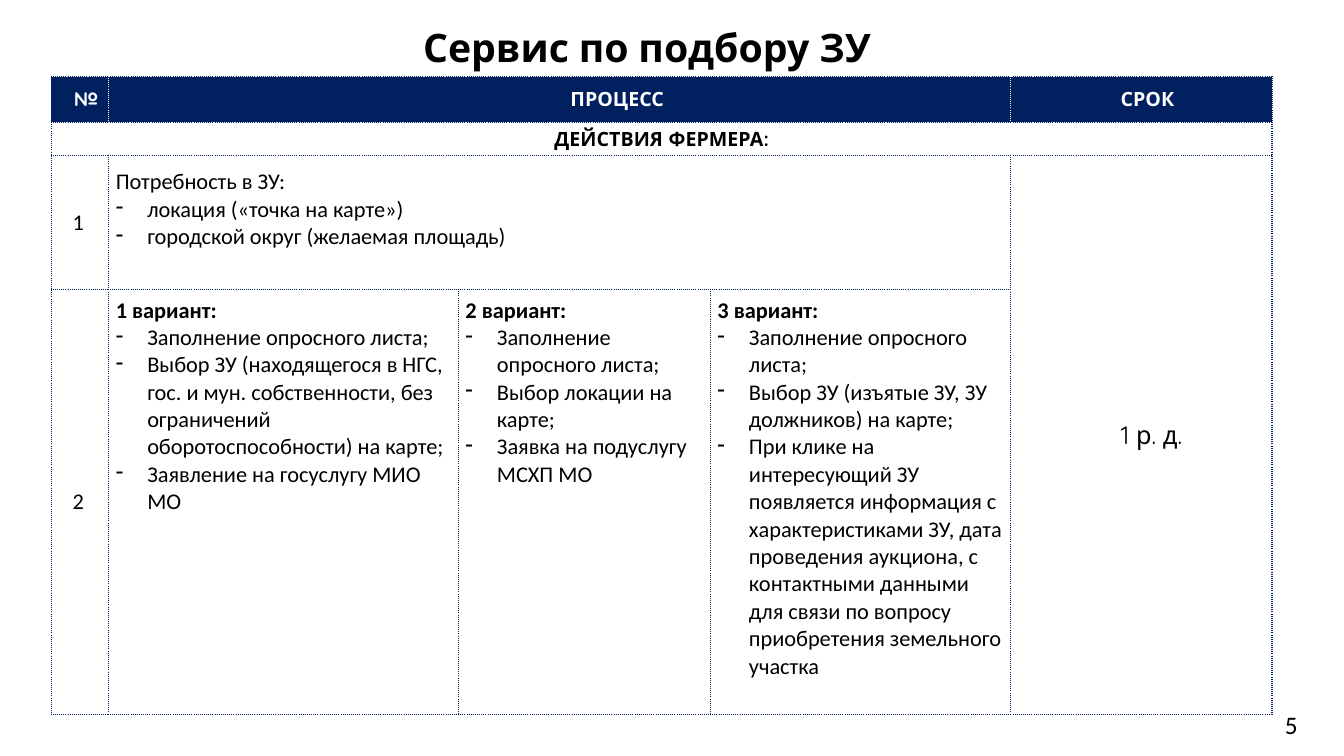
from lxml import etree
from pptx import Presentation
from pptx.dml.color import RGBColor
from pptx.enum.text import MSO_ANCHOR, MSO_AUTO_SIZE, PP_ALIGN
from pptx.oxml.ns import qn
from pptx.util import Pt

LEFT, CENTER = PP_ALIGN.LEFT, PP_ALIGN.CENTER
TOP, MIDDLE = MSO_ANCHOR.TOP, MSO_ANCHOR.MIDDLE
GROW = MSO_AUTO_SIZE.SHAPE_TO_FIT_TEXT
NAVY, WHITE, BLACK = "002060", "FFFFFF", "000000"
COLUMN_WIDTHS = [41, 249.8, 180, 214.6, 186.5]
ROW_HEIGHTS = [32.4, 23.8, 95.8, 303.5]
NARROW = (0.7, 3.6, 0.7, 3.6)
WIDE = (5, 5, 5, 5)
NEED = ["Потребность в ЗУ:", "локация («точка на карте»)", "городской округ (желаемая площадь)"]
VARIANTS = [
    ["1 вариант:", "Заполнение опросного листа;",
     "Выбор ЗУ (находящегося в НГС, гос. и мун. собственности, без ограничений "
     "оборотоспособности) на карте;",
     "Заявление на госуслугу МИО МО"],
    ["2 вариант:", "Заполнение опросного листа;", "Выбор локации на карте;",
     "Заявка на подуслугу МСХП МО"],
    ["3 вариант:", "Заполнение опросного листа;",
     "Выбор ЗУ (изъятые ЗУ, ЗУ должников) на карте;",
     "При клике на интересующий ЗУ появляется информация с характеристиками ЗУ, "
     "дата проведения аукциона, с контактными данными для связи по вопросу "
     "приобретения земельного участка"],
]


def colour(value):
    return RGBColor.from_string(value)


def write(para, text, size=16, font="Calibri", color=BLACK, bold=False,
          align=LEFT, indent=0, bullet=False):
    properties = para._p.get_or_add_pPr()
    if bullet:
        properties.set("marL", str(Pt(22.5)))
        properties.set("indent", str(-Pt(22.5)))
        etree.SubElement(properties, qn("a:buChar"), char="-")
    elif indent:
        properties.set("marL", str(Pt(indent)))
    para.alignment = align
    span = para.add_run()
    span.text = text
    span.font.size = Pt(size)
    span.font.name = font
    span.font.bold = bold
    span.font.color.rgb = colour(color)


def draw_borders(cell, left=NAVY, right=NAVY):
    properties = cell._tc.get_or_add_tcPr()
    for side, color in (("L", left), ("R", right), ("T", NAVY), ("B", NAVY)):
        line = etree.SubElement(properties, qn(f"a:ln{side}"), w=str(Pt(1)))
        fill = etree.SubElement(line, qn("a:solidFill"))
        etree.SubElement(fill, qn("a:srgbClr"), val=color)
        etree.SubElement(line, qn("a:prstDash"), val="sysDot")


def set_margins(cell, margins, anchor=MIDDLE):
    cell.margin_left, cell.margin_top, cell.margin_right, cell.margin_bottom = map(Pt, margins)
    cell.vertical_anchor = anchor


def fill_cell(cell, text, margins=NARROW, **format):
    set_margins(cell, margins)
    write(cell.text_frame.paragraphs[0], text, **format)


def fill_list(cell, lines, margins=WIDE, anchor=MIDDLE, bold=False):
    set_margins(cell, margins, anchor)
    frame = cell.text_frame
    write(frame.paragraphs[0], lines[0], bold=bold)
    for line in lines[1:]:
        write(frame.add_paragraph(), line, bullet=True)


def add_grid(page):
    frame = page.shapes.add_table(len(ROW_HEIGHTS), len(COLUMN_WIDTHS), Pt(36.7), Pt(54.7),
                                  Pt(sum(COLUMN_WIDTHS)), Pt(sum(ROW_HEIGHTS)))
    table = frame.table
    table.first_row = table.horz_banding = False
    for column, width in zip(table.columns, COLUMN_WIDTHS):
        column.width = Pt(width)
    last = len(COLUMN_WIDTHS) - 1
    for number, (row, height) in enumerate(zip(table.rows, ROW_HEIGHTS)):
        row.height = Pt(height)
        for index, cell in enumerate(row.cells):
            if number == 0:
                draw_borders(cell, WHITE if index else NAVY, WHITE if index < last else NAVY)
                cell.fill.solid()
                cell.fill.fore_color.rgb = colour(NAVY)
            else:
                draw_borders(cell)
                cell.fill.background()
    for first, final in (((0, 1), (0, 3)), ((1, 0), (1, 4)), ((2, 1), (2, 3)), ((2, 4), (3, 4))):
        table.cell(*first).merge(table.cell(*final))
    return table


def fill_grid(table):
    heading = {"size": 14, "font": "Quicksand", "bold": True, "align": CENTER}
    for index, text, indent in ((0, "№", 8.6), (1, "ПРОЦЕСС", 82), (4, "СРОК", 8.6)):
        fill_cell(table.cell(0, index), text, color=WHITE, indent=indent, **heading)
    fill_cell(table.cell(1, 0), "ДЕЙСТВИЯ ФЕРМЕРА:", **heading)
    for number in (1, 2):
        fill_cell(table.cell(number + 1, 0), str(number), indent=14.4)
    fill_list(table.cell(2, 1), NEED, margins=(5, 5, 5, 24))
    for index, lines in enumerate(VARIANTS, 1):
        fill_list(table.cell(3, index), lines, anchor=TOP, bold=True)
    fill_cell(table.cell(2, 4), "1 р. д.", WIDE, size=18, font="Quicksand",
              align=CENTER, indent=14.4)


def add_title(page, text):
    title = page.shapes.title
    title.left, title.top, title.width, title.height = Pt(26.6), Pt(16.6), Pt(871), Pt(38.2)
    frame = title.text_frame
    frame.vertical_anchor = TOP
    frame.auto_size = GROW
    para = frame.paragraphs[0]
    write(para, text, size=28, font="Karla", bold=True, align=CENTER)
    para.line_spacing = 0.9


def add_page_number(page, text):
    box = page.shapes.add_textbox(Pt(910.8), Pt(503.3), Pt(23.8), Pt(28.8))
    box.text_frame.word_wrap = False
    box.text_frame.auto_size = GROW
    write(box.text_frame.paragraphs[0], text, size=18)


def main():
    deck = Presentation()
    deck.slide_width, deck.slide_height = Pt(960), Pt(540)
    page = deck.slides.add_slide(deck.slide_layouts[5])
    fill_grid(add_grid(page))
    add_title(page, "Сервис по подбору ЗУ")
    add_page_number(page, "5")
    deck.save("out.pptx")


if __name__ == "__main__":
    main()
